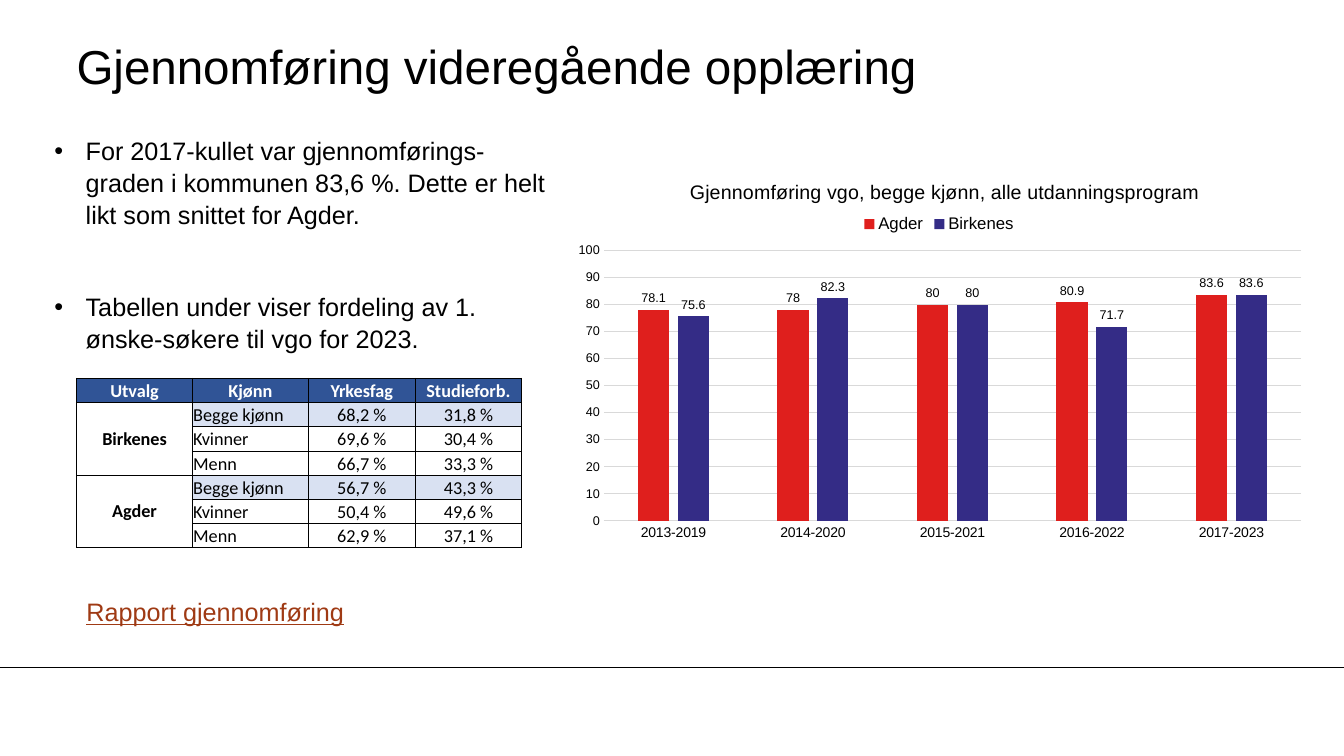
"""Build the slide on completion of upper secondary education."""
import pptx
import pptx.chart.data
import pptx.dml.color
import pptx.enum.chart
import pptx.enum.shapes
import pptx.enum.text
import pptx.oxml
import pptx.oxml.ns
import pptx.util
from lxml import etree

Cm = pptx.util.Cm
Pt = pptx.util.Pt
RGBColor = pptx.dml.color.RGBColor
ALIGN = pptx.enum.text.PP_ALIGN
ANCHOR = pptx.enum.text.MSO_ANCHOR
qn = pptx.oxml.ns.qn

BLACK = RGBColor(0x00, 0x00, 0x00)
WHITE = RGBColor(0xFF, 0xFF, 0xFF)
HEADER_BLUE = RGBColor(0x30, 0x54, 0x96)
PALE_BLUE = RGBColor(0xD9, 0xE1, 0xF2)
LINK_BROWN = RGBColor(0x9F, 0x3A, 0x14)
GRID_GREY = RGBColor(0xD9, 0xD9, 0xD9)
RED = RGBColor(0xDF, 0x1F, 0x1D)
INDIGO = RGBColor(0x34, 0x2C, 0x86)

TITLE = "Gjennomføring videregående opplæring"
BULLETS = [
    "For 2017-kullet var gjennomførings-graden i kommunen 83,6 %. Dette er helt likt som snittet for Agder.",
    "Tabellen under viser fordeling av 1. ønske-søkere til vgo for 2023.",
]
REPORT = "Rapport gjennomføring"
HEADERS = ["Utvalg", "Kjønn", "Yrkesfag", "Studieforb."]
GROUPS = {
    "Birkenes": [
        ("Begge kjønn", "68,2 %", "31,8 %"),
        ("Kvinner", "69,6 %", "30,4 %"),
        ("Menn", "66,7 %", "33,3 %"),
    ],
    "Agder": [
        ("Begge kjønn", "56,7 %", "43,3 %"),
        ("Kvinner", "50,4 %", "49,6 %"),
        ("Menn", "62,9 %", "37,1 %"),
    ],
}
COLUMN_WIDTHS = [2.92, 2.92, 2.69, 2.69]
ROW_HEIGHT = 0.61
CHART_TITLE = "Gjennomføring vgo, begge kjønn, alle utdanningsprogram"
COHORTS = ["2013-2019", "2014-2020", "2015-2021", "2016-2022", "2017-2023"]
SERIES = [
    ("Agder", RED, (78.1, 78, 80, 80.9, 83.6)),
    ("Birkenes", INDIGO, (75.6, 82.3, 80, 71.7, 83.6)),
]


def style_font(font, size, color=BLACK, name="Arial", bold=False, underline=False):
    font.size = Pt(size)
    font.name = name
    font.bold = bold
    font.underline = underline
    font.color.rgb = color


def write(para, text, align=ALIGN.LEFT, **font_format):
    para.alignment = align
    span = para.add_run()
    span.text = text
    style_font(span.font, **font_format)


def add_box(page, left, top, width, height):
    frame = page.shapes.add_textbox(Cm(left), Cm(top), Cm(width), Cm(height)).text_frame
    frame.word_wrap = True
    return frame


def add_bullets(page):
    frame = add_box(page, 1.12, 3.25, 13.13, 5.64)
    for index, text in enumerate(BULLETS):
        para = frame.add_paragraph() if index else frame.paragraphs[0]
        para.line_spacing = 1.05
        if index:
            para.space_before = Pt(43.5)
        properties = para._p.get_or_add_pPr()
        properties.set("marL", str(Cm(0.79)))
        properties.set("indent", str(-Cm(0.79)))
        etree.SubElement(properties, qn("a:buFont")).set("typeface", "Arial")
        etree.SubElement(properties, qn("a:buChar")).set("char", "•")
        write(para, text, size=18)


def fill_cell(cell, text, fill, align=ALIGN.CENTER, anchor=ANCHOR.BOTTOM, color=BLACK, bold=False):
    cell.margin_left = cell.margin_right = cell.margin_top = Cm(0.02)
    cell.margin_bottom = 0
    cell.vertical_anchor = anchor
    properties = cell._tc.get_or_add_tcPr()
    for side in ("lnL", "lnR", "lnT", "lnB"):
        border = etree.SubElement(properties, qn(f"a:{side}"), w=str(Pt(0.5)))
        paint = etree.SubElement(border, qn("a:solidFill"))
        etree.SubElement(paint, qn("a:srgbClr")).set("val", str(BLACK))
    cell.fill.solid()
    cell.fill.fore_color.rgb = fill
    write(cell.text_frame.paragraphs[0], text, align, size=13, name="Calibri", color=color, bold=bold)


def add_applicant_table(page):
    row_count = 1 + sum(len(rows) for rows in GROUPS.values())
    table = page.shapes.add_table(
        row_count, len(HEADERS), Cm(1.93), Cm(9.53),
        Cm(sum(COLUMN_WIDTHS)), Cm(ROW_HEIGHT * row_count)).table
    for column, width in zip(table.columns, COLUMN_WIDTHS):
        column.width = Cm(width)
    for row in table.rows:
        row.height = Cm(ROW_HEIGHT)
    for column, header in enumerate(HEADERS):
        fill_cell(table.cell(0, column), header, HEADER_BLUE, color=WHITE, bold=True)
    top = 1
    for group, rows in GROUPS.items():
        for offset, values in enumerate(rows):
            fill_cell(table.cell(top + offset, 0), "" if offset else group, WHITE,
                      anchor=ANCHOR.MIDDLE, bold=True)
            for column, value in enumerate(values, 1):
                fill_cell(table.cell(top + offset, column), value, WHITE if offset else PALE_BLUE,
                          align=ALIGN.LEFT if column == 1 else ALIGN.CENTER)
        table.cell(top, 0).merge(table.cell(top + len(rows) - 1, 0))
        top += len(rows)


def place_part(chart, tag, index, **fractions):
    part = chart.element.find(f".//{qn(tag)}")
    for old in part.findall(qn("c:layout")):
        part.remove(old)
    layout = pptx.oxml.parse_xml(f"<c:layout {pptx.oxml.ns.nsdecls('c')}/>")
    manual = etree.SubElement(layout, qn("c:manualLayout"))
    if "w" in fractions:
        etree.SubElement(manual, qn("c:layoutTarget")).set("val", "inner")
    for mode in ("xMode", "yMode"):
        etree.SubElement(manual, qn(f"c:{mode}")).set("val", "edge")
    for key, value in fractions.items():
        etree.SubElement(manual, qn(f"c:{key}")).set("val", str(value))
    part.insert(index, layout)


def grey_line(line):
    line.color.rgb = GRID_GREY
    line.width = Pt(0.75)


def add_completion_chart(page):
    kinds = pptx.enum.chart
    data = pptx.chart.data.CategoryChartData()
    data.categories = COHORTS
    for name, _, values in SERIES:
        data.add_series(name, values)
    chart = page.shapes.add_chart(
        kinds.XL_CHART_TYPE.COLUMN_CLUSTERED, Cm(14.27), Cm(3.94), Cm(18.9), Cm(9.88), data).chart
    style_font(chart.font, 10)
    write(chart.chart_title.text_frame.paragraphs[0], CHART_TITLE, ALIGN.CENTER, size=14)
    chart.has_legend = True
    chart.legend.position = kinds.XL_LEGEND_POSITION.TOP
    chart.legend.include_in_layout = False
    style_font(chart.legend.font, 12)

    for axis, size in ((chart.category_axis, 10), (chart.value_axis, 9)):
        axis.major_tick_mark = axis.minor_tick_mark = kinds.XL_TICK_MARK.NONE
        style_font(axis.tick_labels.font, size)
    grey_line(chart.category_axis.format.line)
    values_axis = chart.value_axis
    values_axis.minimum_scale, values_axis.maximum_scale, values_axis.major_unit = 0, 100, 10
    values_axis.format.line.fill.background()
    grey_line(values_axis.major_gridlines.format.line)
    values_axis.tick_labels.number_format = "#,##0"
    values_axis.tick_labels.number_format_is_linked = False

    plot = chart.plots[0]
    plot.gap_width, plot.overlap, plot.vary_by_categories = 219, -27, False
    for series, (_, color, _) in zip(plot.series, SERIES):
        series.format.fill.solid()
        series.format.fill.fore_color.rgb = color
        labels = series.data_labels
        labels.show_value = True
        labels.position = kinds.XL_LABEL_POSITION.OUTSIDE_END
        style_font(labels.font, 9)
    place_part(chart, "c:title", 1, x=0.16, y=0.05)
    place_part(chart, "c:legend", 1, x=0.39, y=0.14)
    place_part(chart, "c:plotArea", 0, x=0.05, y=0.24, w=0.93, h=0.69)


def main():
    deck = pptx.Presentation()
    deck.slide_width, deck.slide_height = Cm(33.87), Cm(19.05)
    page = deck.slides.add_slide(deck.slide_layouts[6])

    rule = page.shapes.add_connector(
        pptx.enum.shapes.MSO_CONNECTOR.STRAIGHT, 0, Cm(16.81), deck.slide_width, Cm(16.81))
    rule.line.color.rgb = BLACK
    rule.line.width = Pt(0.75)
    etree.SubElement(rule._element.spPr, qn("a:effectLst"))

    heading = add_box(page, 1.93, 0.69, 28.19, 1.9)
    heading.margin_left = heading.margin_right = heading.margin_top = heading.margin_bottom = 0
    heading.vertical_anchor = ANCHOR.MIDDLE
    write(heading.paragraphs[0], TITLE, size=34)
    add_bullets(page)
    add_applicant_table(page)
    write(add_box(page, 1.93, 14.91, 7.14, 1.02).paragraphs[0], REPORT,
          size=18, color=LINK_BROWN, underline=True)
    add_completion_chart(page)
    deck.save("out.pptx")


if __name__ == "__main__":
    main()
